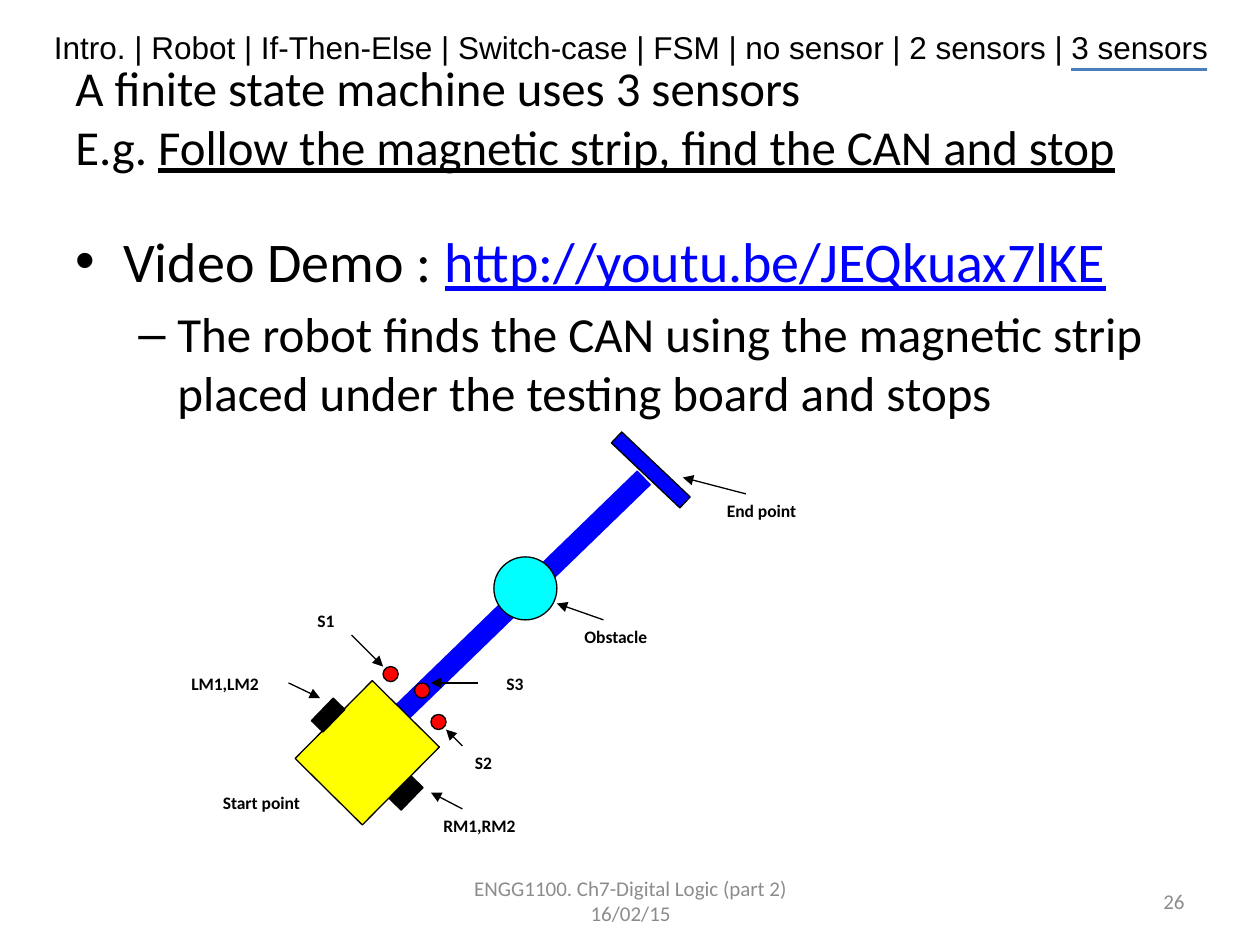
from pptx import Presentation
from pptx.dml.color import RGBColor
from pptx.enum.shapes import MSO_CONNECTOR, MSO_SHAPE
from pptx.enum.text import MSO_ANCHOR, PP_ALIGN
from pptx.oxml.ns import qn
from pptx.util import Inches, Pt
from lxml import etree

RECTANGLE, OVAL = MSO_SHAPE.RECTANGLE, MSO_SHAPE.OVAL
STRAIGHT = MSO_CONNECTOR.STRAIGHT
TOP, MIDDLE = MSO_ANCHOR.TOP, MSO_ANCHOR.MIDDLE
LEFT, CENTER, RIGHT = PP_ALIGN.LEFT, PP_ALIGN.CENTER, PP_ALIGN.RIGHT

THEME = {
    "heading_font": "Arial", "font": "Calibri",
    "text": "000000", "muted": "8C8C8C", "link": "0000FF", "accent": "4B7EBC",
    "strip": "0000FF", "robot": "FFFF00", "wheel": "000000",
    "sensor": "FF0000", "can": "00FFFF", "outline": "000000", "paper": "FFFFFF",
    "navigation": 18, "title": 27.9, "bullet": 32, "sub_bullet": 28,
    "footer": 12, "label": 10, "thin": 0.75, "thick": 2,
}

SECTIONS = ["Intro.", "Robot", "If-Then-Else", "Switch-case", "FSM",
            "no sensor", "2 sensors", "3 sensors"]
TITLE = ["A finite state machine uses 3 sensors", "E.g. "]
TITLE_UNDERLINED = "Follow the magnetic strip, find the CAN and stop"
VIDEO = "Video Demo : "
VIDEO_ADDRESS = "http://youtu.be/JEQkuax7lKE"
VIDEO_DETAIL = ("The robot finds the CAN using the magnetic strip "
                "placed under the testing board and stops")
FOOTERS = [
    ("ENGG1100. Ch7-Digital Logic (part 2) 16/02/15", (3.42, 6.95, 3.17, 0.4), CENTER),
    ("26", (7.17, 6.95, 2.33, 0.4), RIGHT),
]
PARTS = [
    (RECTANGLE, (2.61, 4.73, 2.91, 0.15), 315.9, "strip", "strip"),
    (RECTANGLE, (4.79, 3.67, 0.75, 0.12), 43.5, "strip", "outline"),
    (RECTANGLE, (2.54, 5.54, 0.75, 0.87), 44.7, "robot", "outline"),
    (RECTANGLE, (3.1, 6.23, 0.25, 0.13), 314.1, "wheel", "outline"),
    (RECTANGLE, (2.48, 5.61, 0.25, 0.13), 314.1, "wheel", "outline"),
    (OVAL, (3.04, 5.29, 0.12, 0.12), 0, "sensor", "outline"),
    (OVAL, (3.42, 5.67, 0.12, 0.12), 0, "sensor", "outline"),
    (OVAL, (3.29, 5.42, 0.12, 0.12), 0, "sensor", "outline"),
    (OVAL, (3.92, 4.42, 0.5, 0.5), 0, "can", "outline"),
]
LABELS = [
    ("S2", (3.67, 5.92, 0.62, 0.39)),
    ("S3", (3.92, 5.29, 0.62, 0.37)),
    ("S1", (2.42, 4.79, 0.62, 0.32)),
    ("Obstacle", (4.54, 4.92, 0.88, 0.37)),
    ("End point", (5.67, 3.92, 0.87, 0.37)),
    ("RM1,RM2", (3.42, 6.42, 1.12, 0.37)),
    ("LM1,LM2", (1.42, 5.29, 1, 0.37)),
    ("Start point", (1.67, 6.24, 0.87, 0.38)),
]
ARROWS = [
    (2.79, 5.04, 3.04, 5.29),
    (3.79, 5.42, 3.42, 5.42),
    (3.67, 5.92, 3.54, 5.79),
    (4.79, 4.92, 4.42, 4.79),
    (5.92, 3.92, 5.42, 3.79),
    (3.67, 6.42, 3.42, 6.29),
    (2.29, 5.42, 2.54, 5.54),
]
SECTION_UNDERLINE = (8.5, 0.55, 9.58, 0.55)


def color(name):
    return RGBColor.from_string(THEME[name])


def lengths(values):
    return [Inches(value) for value in values]


def style(paragraph, size, ink="text", font="font", bold=False, align=LEFT):
    paragraph.alignment = align
    paragraph.font.name = THEME[font]
    paragraph.font.size = Pt(THEME[size])
    paragraph.font.color.rgb = color(ink)
    paragraph.font.bold = bold


def add_text(slide, box, text="", anchor=TOP):
    frame = slide.shapes.add_textbox(*lengths(box)).text_frame
    frame.word_wrap = True
    frame.vertical_anchor = anchor
    frame.text = text
    return frame


def add_run(paragraph, text, underline=False):
    run = paragraph.add_run()
    run.text = text
    run.font.underline = underline
    return run


def set_bullet(paragraph, character, margin, hanging):
    properties = paragraph._p.get_or_add_pPr()
    properties.set("marL", str(Inches(margin)))
    properties.set("indent", str(-Inches(hanging)))
    etree.SubElement(properties, qn("a:buFont")).set("typeface", "Arial")
    etree.SubElement(properties, qn("a:buChar")).set("char", character)


def add_part(slide, kind, box, rotation, fill, line=None):
    shape = slide.shapes.add_shape(kind, *lengths(box))
    shape.shadow.inherit = False
    shape.rotation = rotation
    shape.fill.solid()
    shape.fill.fore_color.rgb = color(fill)
    if line:
        shape.line.color.rgb = color(line)
        shape.line.width = Pt(THEME["thin"])
    else:
        shape.line.fill.background()
    return shape


def add_line(slide, ends, ink, width, arrow=False):
    connector = slide.shapes.add_connector(STRAIGHT, *lengths(ends))
    connector.line.color.rgb = color(ink)
    connector.line.width = Pt(THEME[width])
    if arrow:
        line = connector.line._get_or_add_ln()
        etree.SubElement(line, qn("a:tailEnd")).set("type", "triangle")
    etree.SubElement(connector._element.spPr, qn("a:effectLst"))


def add_wording(slide):
    navigation = add_text(slide, (0.33, 0.17, 9.58, 0.4), " | ".join(SECTIONS))
    navigation.word_wrap = False
    style(navigation.paragraphs[0], "navigation", font="heading_font")

    title = add_text(slide, (0.5, 0.3, 9, 1.25), anchor=MIDDLE).paragraphs[0]
    style(title, "title")
    add_run(title, TITLE[0])
    title.add_line_break()
    add_run(title, TITLE[1])
    add_run(title, TITLE_UNDERLINED, True)

    body = add_text(slide, (0.5, 1.75, 9, 4.95))
    video = body.paragraphs[0]
    set_bullet(video, "•", 0.38, 0.38)
    style(video, "bullet")
    add_run(video, VIDEO)
    add_run(video, VIDEO_ADDRESS, True).font.color.rgb = color("link")
    detail = body.add_paragraph()
    detail.level = 1
    set_bullet(detail, "–", 0.81, 0.31)
    detail.space_before = Pt(THEME["sub_bullet"] * 0.2)
    style(detail, "sub_bullet")
    add_run(detail, VIDEO_DETAIL)

    for text, box, align in FOOTERS:
        footer = add_text(slide, box, text, MIDDLE)
        style(footer.paragraphs[0], "footer", "muted", align=align)


def add_diagram(slide):
    for part in PARTS:
        add_part(slide, *part)
    for text, box in LABELS:
        frame = add_part(slide, RECTANGLE, box, 0, "paper").text_frame
        frame.text = text
        frame.word_wrap = True
        frame.vertical_anchor = TOP
        style(frame.paragraphs[0], "label", bold=True)
    for ends in ARROWS:
        add_line(slide, ends, "outline", "thin", True)


def main():
    presentation = Presentation()
    presentation.slide_width, presentation.slide_height = lengths((10, 7.5))
    slide = presentation.slides.add_slide(presentation.slide_layouts[6])
    add_wording(slide)
    add_diagram(slide)
    add_line(slide, SECTION_UNDERLINE, "accent", "thick")
    presentation.save("out.pptx")


if __name__ == "__main__":
    main()
